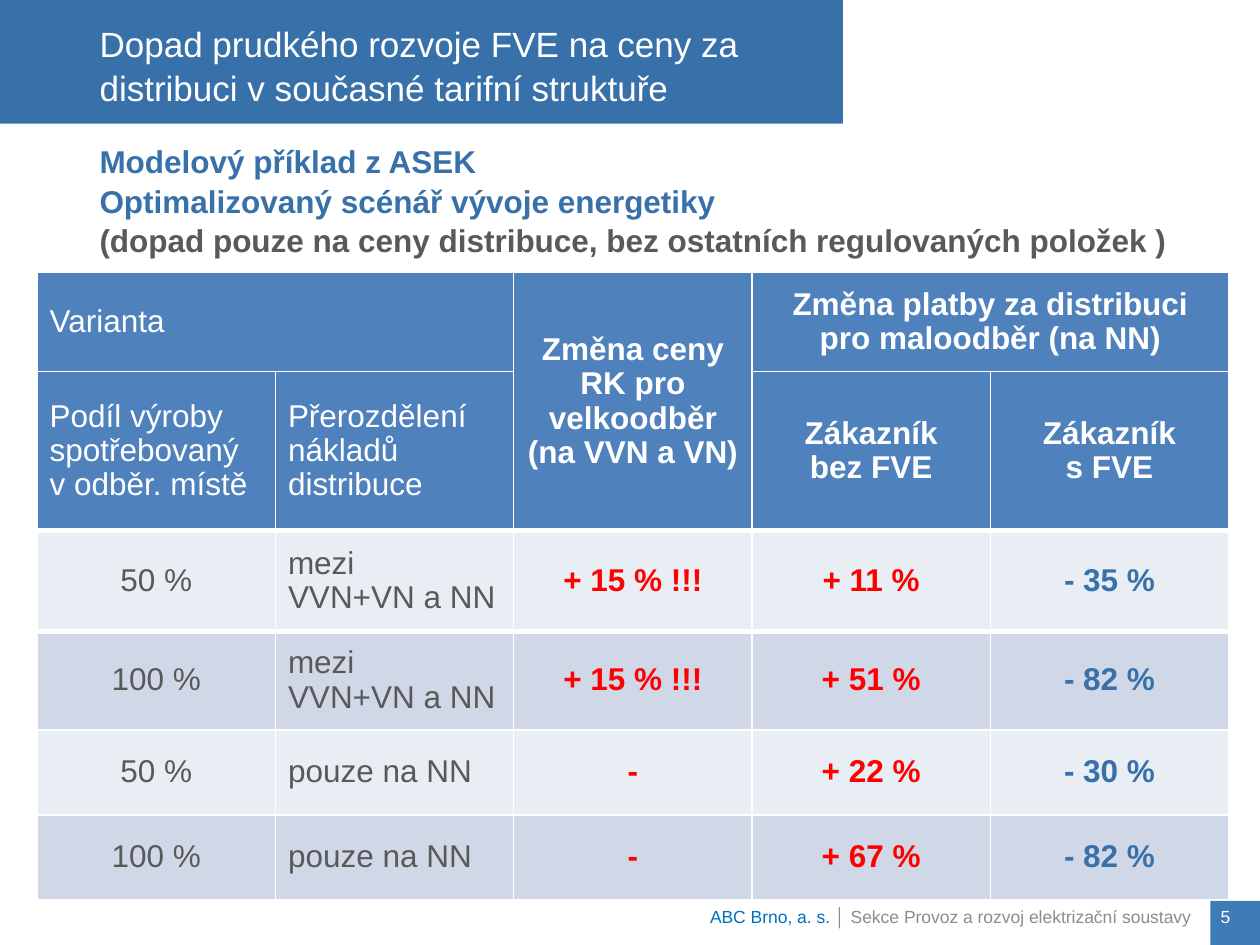
from dataclasses import dataclass
from typing import Optional

from lxml.etree import SubElement
from pptx import Presentation
from pptx.dml.color import RGBColor
from pptx.enum.shapes import MSO_SHAPE as Preset
from pptx.enum.text import MSO_ANCHOR as Anchor, PP_ALIGN as Align
from pptx.oxml.ns import qn
from pptx.util import Pt

WHITE = RGBColor(0xFF, 0xFF, 0xFF)
BLUE = RGBColor(0x38, 0x71, 0xAA)
PAGE_BLUE = RGBColor(0x3D, 0x7B, 0xB9)
COMPANY_BLUE = RGBColor(0x00, 0x70, 0xC0)
HEADER_BLUE = RGBColor(0x4F, 0x81, 0xBD)
LIGHT_BAND = RGBColor(0xE9, 0xED, 0xF4)
DARK_BAND = RGBColor(0xD0, 0xD8, 0xE8)
DARK_GREY = RGBColor(0x59, 0x59, 0x59)
FOOTER_GREY = RGBColor(0x8C, 0x8C, 0x8C)
RED = RGBColor(0xFF, 0x00, 0x00)

COLUMN_WIDTH = 136.2
ROW_HEIGHTS = (56.5, 87.4, 57.4, 56.6, 48.6, 48.3)
HEADER_ROWS = 2
THICK_EDGES = (2, 3)


@dataclass
class Box:
    left: float
    top: float
    width: float
    height: float
    insets: tuple
    fill: Optional[RGBColor] = None
    anchor: Anchor = Anchor.TOP


@dataclass
class Header:
    row: int
    column: int
    text: str
    bold: bool = True
    rows: int = 1
    columns: int = 1


@dataclass
class ColumnStyle:
    align: Align
    color: RGBColor
    bold: bool


HEADERS = (
    Header(0, 0, "Varianta", bold=False, columns=2),
    Header(0, 2, "Změna ceny RK pro velkoodběr (na VVN a VN)", rows=2),
    Header(0, 3, "Změna platby za distribuci pro maloodběr (na NN)", columns=2),
    Header(1, 0, "Podíl výroby spotřebovaný \vv odběr. místě", bold=False),
    Header(1, 1, "Přerozdělení nákladů distribuce", bold=False),
    Header(1, 3, "Zákazník\vbez FVE"),
    Header(1, 4, "Zákazník\vs FVE"),
)
VARIANTS = (
    ("50 %", "mezi\nVVN+VN a NN", "+ 15 % !!!", "+ 11 %", "- 35 %"),
    ("100 %", "mezi\nVVN+VN a NN", "+ 15 % !!!", "+ 51 %", "- 82 %"),
    ("50 %", "pouze na NN", "-", "+ 22 %", "- 30 %"),
    ("100 %", "pouze na NN", "-", "+ 67 %", "- 82 %"),
)
COLUMN_STYLES = (
    ColumnStyle(Align.CENTER, DARK_GREY, False),
    ColumnStyle(Align.LEFT, DARK_GREY, False),
    ColumnStyle(Align.CENTER, RED, True),
    ColumnStyle(Align.CENTER, RED, True),
    ColumnStyle(Align.CENTER, BLUE, True),
)


def write_text(frame, text: str, *, size: float = 18, color: RGBColor = WHITE,
               bold: bool = False, align: Align = Align.LEFT,
               spacing: float = 1.0, same_paragraph: bool = False) -> None:
    """Append text, with newlines as paragraphs and vertical tabs as line breaks."""
    for block in text.split("\n"):
        paragraph = frame.paragraphs[-1]
        if paragraph.runs and not same_paragraph:
            paragraph = frame.add_paragraph()
        paragraph.alignment = align
        paragraph.line_spacing = spacing
        for index, line in enumerate(block.split("\v")):
            if index:
                paragraph.add_line_break()
            run = paragraph.add_run()
            run.text = line
            run.font.name = "Arial"
            run.font.size = Pt(size)
            run.font.bold = bold
            run.font.color.rgb = color


def add_box(slide, box: Box):
    """Add a filled rectangle or a plain text box and return its text frame."""
    place = [Pt(value) for value in (box.left, box.top, box.width, box.height)]
    if box.fill is None:
        shape = slide.shapes.add_textbox(*place)
    else:
        shape = slide.shapes.add_shape(Preset.RECTANGLE, *place)
        shape.shadow.inherit = False
        shape.fill.solid()
        shape.fill.fore_color.rgb = box.fill
        shape.line.fill.background()
    frame = shape.text_frame
    frame.word_wrap = True
    frame.vertical_anchor = box.anchor
    (frame.margin_left, frame.margin_top,
     frame.margin_right, frame.margin_bottom) = map(Pt, box.insets)
    return frame


def style_cell(cell, row: int, fill: RGBColor) -> None:
    """Give a cell white borders, a fill and middle anchoring."""
    properties = cell._tc.get_or_add_tcPr()
    top, bottom = (3 if edge in THICK_EDGES else 1 for edge in (row, row + 1))
    for side, width in (("L", 1), ("R", 1), ("T", top), ("B", bottom)):
        line = SubElement(properties, qn(f"a:ln{side}"), w=str(Pt(width)))
        solid = SubElement(line, qn("a:solidFill"))
        SubElement(solid, qn("a:srgbClr"), val=str(WHITE))
    cell.fill.solid()
    cell.fill.fore_color.rgb = fill
    cell.vertical_anchor = Anchor.MIDDLE


def add_price_table(slide) -> None:
    """Add the table of price changes by variant."""
    count = len(COLUMN_STYLES)
    table = slide.shapes.add_table(
        len(ROW_HEIGHTS), count, Pt(21.2), Pt(155.8),
        Pt(COLUMN_WIDTH * count), Pt(sum(ROW_HEIGHTS))).table
    for column in table.columns:
        column.width = Pt(COLUMN_WIDTH)
    for index, height in enumerate(ROW_HEIGHTS):
        table.rows[index].height = Pt(height)
        band = DARK_BAND if index % 2 else LIGHT_BAND
        for column in range(count):
            style_cell(table.cell(index, column), index,
                       HEADER_BLUE if index < HEADER_ROWS else band)
    for header in HEADERS:
        cell = table.cell(header.row, header.column)
        if header.rows * header.columns > 1:
            cell.merge(table.cell(header.row + header.rows - 1,
                                  header.column + header.columns - 1))
        write_text(cell.text_frame, header.text, bold=header.bold, spacing=0.97,
                   align=Align.CENTER if header.bold else Align.LEFT)
    for row, values in enumerate(VARIANTS, HEADER_ROWS):
        for column, (value, style) in enumerate(zip(values, COLUMN_STYLES)):
            write_text(table.cell(row, column).text_frame, value, color=style.color,
                       bold=style.bold, align=style.align, spacing=0.97)


def main() -> None:
    """Build the slide and save it."""
    presentation = Presentation()
    presentation.slide_width, presentation.slide_height = Pt(720), Pt(540)
    slide = presentation.slides.add_slide(presentation.slide_layouts[6])

    title = add_box(slide, Box(0, 0, 481.7, 70.6, (56.9, 14.4, 51.1, 8.6),
                               BLUE, Anchor.BOTTOM))
    write_text(title, "Dopad prudkého rozvoje FVE na ceny za distribuci "
               "v současné tarifní struktuře", size=20, spacing=1.05)

    footer = add_box(slide, Box(0, 514.8, 680.4, 25.2, (56.9, 2.9, 0, 0)))
    write_text(footer, "ABC Brno, a. s. ", size=10, color=COMPANY_BLUE, align=Align.RIGHT)
    write_text(footer, "│ Sekce Provoz a rozvoj elektrizační soustavy", size=10,
               color=FOOTER_GREY, align=Align.RIGHT, same_paragraph=True)

    page = add_box(slide, Box(691.7, 514.8, 28.3, 25.2, (5.8, 2.9, 0, 0), PAGE_BLUE))
    write_text(page, "5", size=10)

    add_price_table(slide)

    subtitle = add_box(slide, Box(0, 72, 720, 77, (56.9, 8, 7.2, 3.6)))
    write_text(subtitle, "Modelový příklad z ASEK\nOptimalizovaný scénář vývoje energetiky",
               color=BLUE, bold=True, spacing=1.05)
    write_text(subtitle, "(dopad pouze na ceny distribuce, bez ostatních "
               "regulovaných položek )", color=DARK_GREY, bold=True, spacing=1.05)

    presentation.save("out.pptx")


if __name__ == "__main__":
    main()
